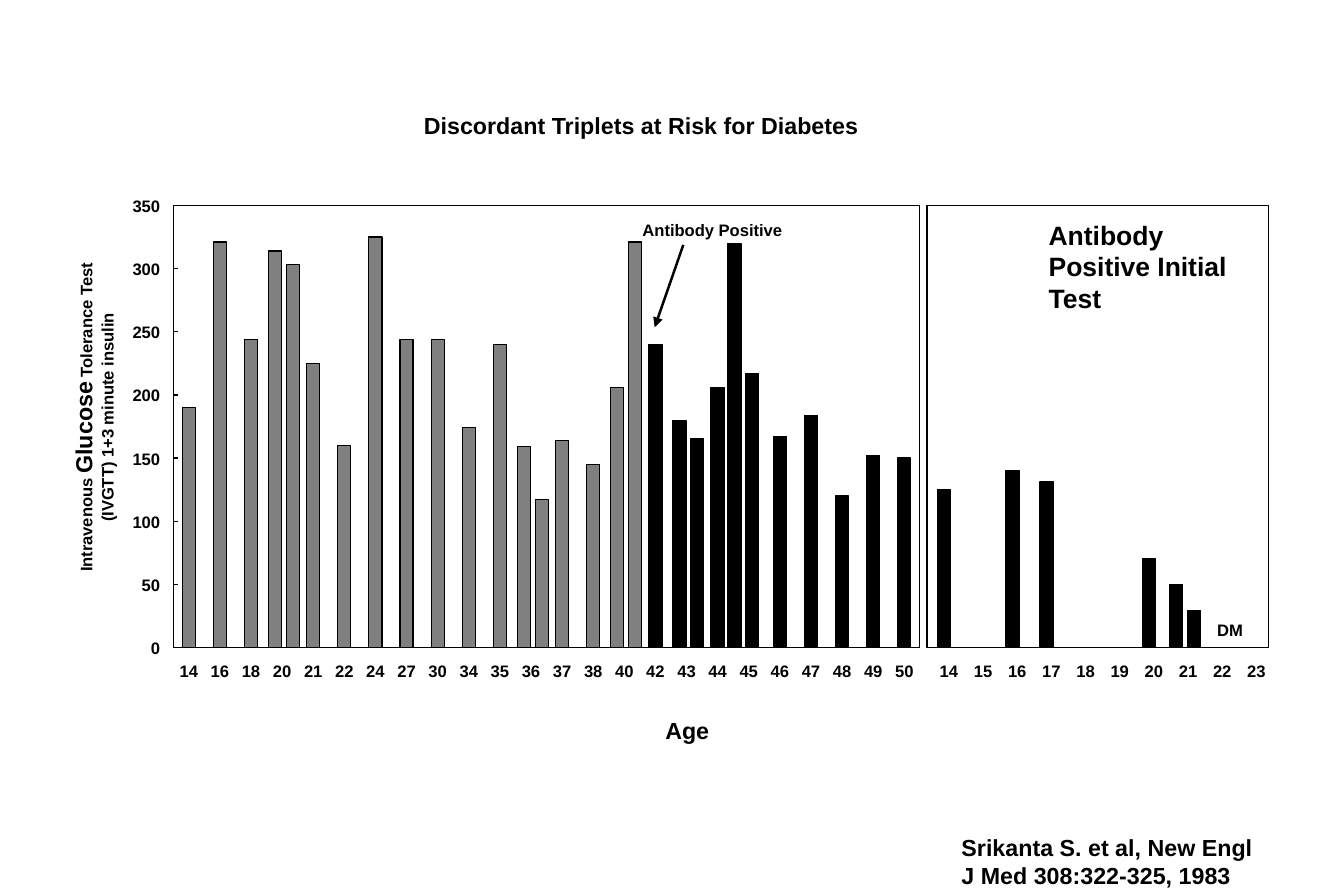
from dataclasses import dataclass

from lxml import etree
from pptx import Presentation
from pptx.dml.color import RGBColor
from pptx.enum.shapes import MSO_CONNECTOR, MSO_SHAPE
from pptx.enum.text import PP_ALIGN
from pptx.oxml.ns import qn
from pptx.util import Inches, Pt

RECT = MSO_SHAPE.RECTANGLE
STRAIGHT = MSO_CONNECTOR.STRAIGHT
LEFT, CENTER, RIGHT = PP_ALIGN.LEFT, PP_ALIGN.CENTER, PP_ALIGN.RIGHT


@dataclass(frozen=True)
class Theme:
    """Colours, font and type sizes of the slide."""
    font: str = "Arial"
    ink: RGBColor = RGBColor(0x00, 0x00, 0x00)
    gray: RGBColor = RGBColor(0x80, 0x80, 0x80)
    small: int = 10
    medium: int = 14
    large: int = 16
    thin: float = 0.75
    thick: float = 1.5


THEME = Theme()
AXIS_MAX, AXIS_STEP = 350, 50
BAR_W, BAR_PITCH = 0.11, 0.15
PAIR_START = -0.06
LABEL_W, LABEL_H = 0.4, 0.17

LEFT_BOX = (1.45, 1.72, 6.25, 3.7)
RIGHT_BOX = (7.76, 1.72, 2.86, 3.7)

LEFT_TESTS = {
    14: [190], 16: [321], 18: [244], 20: [314, 303], 21: [225], 22: [160],
    24: [325], 27: [244], 30: [244], 34: [174], 35: [240], 36: [159, 117],
    37: [164], 38: [145], 40: [206, 321], 42: [240], 43: [180, 165],
    44: [206], 45: [320, 217], 46: [167], 47: [184], 48: [120], 49: [152],
    50: [150],
}
RIGHT_TESTS = {
    14: [125], 15: [], 16: [140], 17: [131], 18: [], 19: [], 20: [70],
    21: [50, 29], 22: [], 23: [],
}


def add_text(s, box, runs, align=LEFT, inset=True):
    """Add a bold text box made of (text, size) runs."""
    sp = s.shapes.add_textbox(*map(Inches, box))
    tf = sp.text_frame
    tf.word_wrap = True
    if not inset:
        tf.margin_left = tf.margin_right = tf.margin_top = tf.margin_bottom = 0
    p = tf.paragraphs[0]
    p.alignment = align
    p.font.name = THEME.font
    p.font.bold = True
    p.font.color.rgb = THEME.ink
    for text, size in runs:
        r = p.add_run()
        r.text = text
        r.font.size = Pt(size)
    return sp


def add_rect(s, box, fill=None):
    """Add a thinly outlined rectangle, filled if a colour is given."""
    sp = s.shapes.add_shape(RECT, *map(Inches, box))
    sp.shadow.inherit = False
    sp.line.color.rgb = THEME.ink
    sp.line.width = Pt(THEME.thin)
    if fill is None:
        sp.fill.background()
    else:
        sp.fill.solid()
        sp.fill.fore_color.rgb = fill


def add_line(s, start, end, width=THEME.thin, arrow=False):
    """Add a straight line, with an arrowhead at its end if asked."""
    sp = s.shapes.add_connector(STRAIGHT, *map(Inches, start + end))
    sp.line.color.rgb = THEME.ink
    sp.line.width = Pt(width)
    if arrow:
        etree.SubElement(sp.line._get_or_add_ln(), qn("a:tailEnd"), type="triangle")
    etree.SubElement(sp._element.spPr, qn("a:effectLst"))


def add_panel(s, box, tests, positive_age, label_shift=0, starts=None):
    """Draw a framed panel with the bars and age labels of one triplet."""
    x, y, w, h = box
    slot = w / len(tests)
    add_rect(s, box)
    for i, (age, values) in enumerate(tests.items()):
        center = x + slot * (i + 0.5)
        start = PAIR_START if len(values) > 1 else 0
        start = (starts or {}).get(age, start)
        fill = THEME.ink if age >= positive_age else THEME.gray
        for j, value in enumerate(values):
            bar_h = h * value / AXIS_MAX
            bar_x = center + start + j * BAR_PITCH - BAR_W / 2
            add_rect(s, (bar_x, y + h - bar_h, BAR_W, bar_h), fill)
        label = (center + label_shift - LABEL_W / 2, y + h + 0.11, LABEL_W, LABEL_H)
        add_text(s, label, [(str(age), THEME.small)], CENTER, inset=False)


def add_value_axis(s, box):
    """Draw the value axis, ticks and labels along the left edge of the box."""
    x, y, w, h = box
    add_line(s, (x, y), (x, y + h))
    for value in range(0, AXIS_MAX + 1, AXIS_STEP):
        tick_y = y + h * (1 - value / AXIS_MAX)
        add_line(s, (x, tick_y), (x + 0.04, tick_y))
        label = (x - 0.11 - LABEL_W, tick_y - 0.08, LABEL_W, LABEL_H)
        add_text(s, label, [(str(value), THEME.small)], RIGHT, inset=False)


def add_left_panel(s, box):
    """Draw the triplet who turned antibody positive at 42."""
    x, y, w, h = box
    add_panel(s, box, LEFT_TESTS, 42, starts={45: -0.12})
    add_value_axis(s, box)
    add_text(s, (x + 3.83, y + 0.07, 1.93, 0.27), [("Antibody Positive", THEME.small)])
    add_line(s, (x + 4.27, y + 0.33), (x + 4.03, y + 1.02), THEME.thick, arrow=True)


def add_right_panel(s, box):
    """Draw the triplet who was antibody positive from the first test."""
    x, y, w, h = box
    add_panel(s, box, RIGHT_TESTS, 14, label_shift=0.04)
    add_text(s, (x + 0.92, y + 0.06, 1.93, 0.9),
             [("Antibody Positive Initial Test", THEME.large)])
    add_text(s, (x + 2.33, y + 3.42, 0.6, 0.27), [("DM", THEME.small)])


def add_captions(s, box):
    """Place the title, axis titles and citation in the slide box."""
    x, y, w, h = box
    add_text(s, (x + 3.45, y + 0.88, 4.73, 0.33),
             [("Discordant Triplets at Risk for Diabetes", THEME.medium)])
    add_text(s, (x + 5.47, y + 5.95, 0.59, 0.34), [("Age", THEME.medium)])
    add_text(s, (x + w - 3.3, y + h - 0.57, 2.77, 0.57),
             [("Srikanta S. et al, New Engl J Med 308:322-325, 1983", THEME.medium)])
    sp = add_text(s, (x - 0.84, y + 3.24, 3.25, 0.51),
                  [("Intravenous ", THEME.small), ("Glucose", THEME.medium),
                   (" Tolerance Test (IVGTT) 1+3 minute insulin", THEME.small)], CENTER)
    sp.rotation = 270


def main():
    """Build the slide and save it."""
    prs = Presentation()
    prs.slide_width, prs.slide_height = Inches(11.25), Inches(7.5)
    s = prs.slides.add_slide(prs.slide_layouts[6])
    add_captions(s, (0, 0, 11.25, 7.5))
    add_left_panel(s, LEFT_BOX)
    add_right_panel(s, RIGHT_BOX)
    prs.save("out.pptx")


if __name__ == "__main__":
    main()
